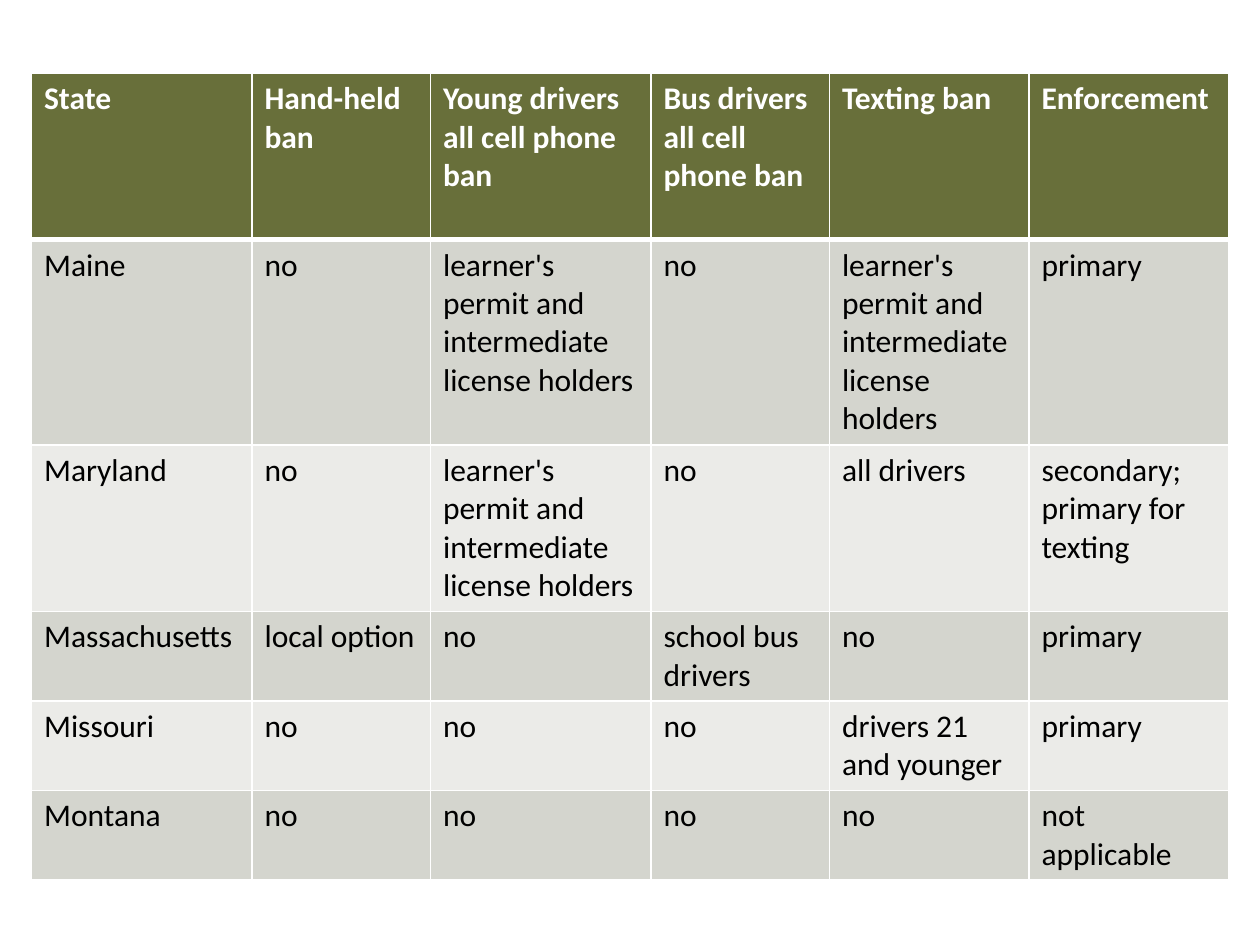
import pptx
import pptx.util
import pptx.dml.color
import pptx.oxml
import pptx.oxml.ns

Pt = pptx.util.Pt

HEAD = ["State", "Hand-held ban", "Young drivers all cell phone ban",
        "Bus drivers all cell phone ban", "Texting ban", "Enforcement"]
PERMIT = "learner's permit and intermediate license holders"
LAWS = [
    ["Maine", "no", PERMIT, "no", PERMIT, "primary"],
    ["Maryland", "no", PERMIT, "no", "all drivers",
     "secondary; primary for texting"],
    ["Massachusetts", "local option", "no", "school bus drivers", "no",
     "primary"],
    ["Missouri", "no", "no", "no", "drivers 21 and younger", "primary"],
    ["Montana", "no", "no", "no", "no", "not applicable"],
]
HUES = {"head": "686F3A", "odd": "D4D5CE", "even": "EBEBE8",
        "line": "FFFFFF", "light": "FFFFFF", "dark": "000000"}
WIDTHS = [126, 102, 126, 102, 114, 114]
HEIGHTS = [95, 117.4, 95, 51, 51, 51]
LEFT, TOP = 18, 42


def rgb(name):
    return pptx.dml.color.RGBColor.from_string(HUES[name])


def edge(cell, sides):
    """Draw cell borders; sides maps L, R, T, B in that order to widths."""
    props = cell._tc.get_or_add_tcPr()
    for spot, (side, width) in enumerate(sides.items()):
        props.insert(spot, pptx.oxml.parse_xml(
            f'<a:ln{side} {pptx.oxml.ns.nsdecls("a")} w="{Pt(width)}">'
            f'<a:solidFill><a:srgbClr val="{HUES["line"]}"/></a:solidFill>'
            f'</a:ln{side}>'))


def style(cell, text, row):
    head = row == 0
    cell.fill.solid()
    cell.fill.fore_color.rgb = rgb(
        "head" if head else "odd" if row % 2 else "even")
    edge(cell, {"L": 1, "R": 1, "T": 3 if row == 1 else 1,
                "B": 3 if head else 1})
    run = cell.text_frame.paragraphs[0].add_run()
    run.text = text
    run.font.name = "Calibri"
    run.font.size = Pt(18)
    run.font.bold = head
    run.font.color.rgb = rgb("light" if head else "dark")


def main():
    deck = pptx.Presentation()
    deck.slide_width, deck.slide_height = Pt(720), Pt(540)
    slide = deck.slides.add_slide(deck.slide_layouts[6])
    rows = [HEAD] + LAWS
    table = slide.shapes.add_table(
        len(rows), len(HEAD), Pt(LEFT), Pt(TOP),
        Pt(sum(WIDTHS)), Pt(sum(HEIGHTS))).table
    for col, width in zip(table.columns, WIDTHS):
        col.width = Pt(width)
    for line, height in zip(table.rows, HEIGHTS):
        line.height = Pt(height)
    for r, texts in enumerate(rows):
        for c, text in enumerate(texts):
            style(table.cell(r, c), text, r)
    deck.save("out.pptx")


if __name__ == "__main__":
    main()
